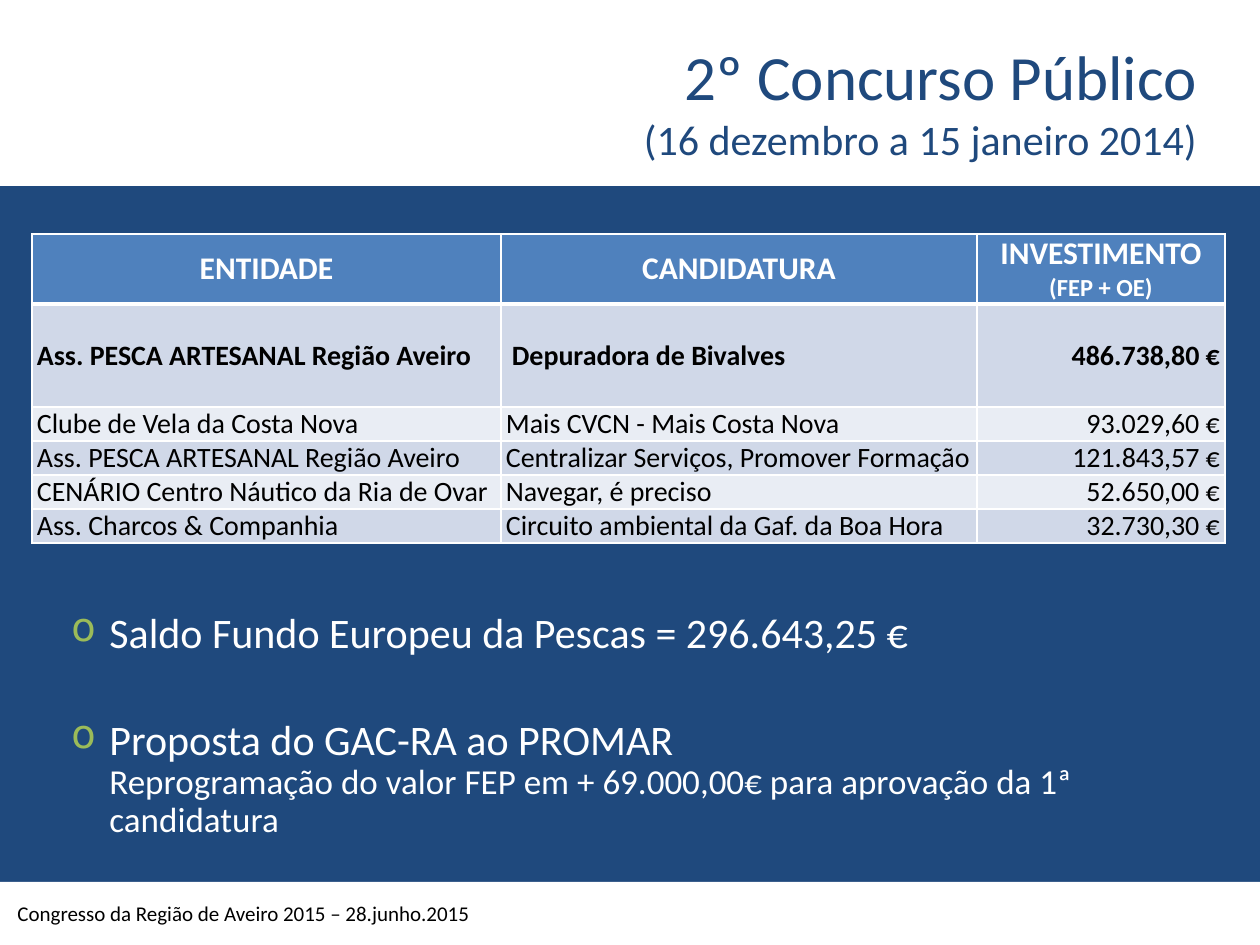
from dataclasses import dataclass

from lxml import etree
from pptx import Presentation
from pptx import util as u
from pptx.dml.color import RGBColor
from pptx.enum import shapes, text
from pptx.oxml import ns

PX_PER_INCH = 126
LEFT, CENTER, RIGHT = text.PP_ALIGN.LEFT, text.PP_ALIGN.CENTER, text.PP_ALIGN.RIGHT


def px(length):
    return u.Emu(round(length * u.Inches(1) / PX_PER_INCH))


@dataclass(frozen=True)
class Theme:
    font: str = "Calibri"
    navy: str = "1F497D"
    white: str = "FFFFFF"
    black: str = "000000"
    bullet: str = "9BBB59"
    header: str = "4F81BD"
    bands: tuple = ("D0D8E8", "E9EDF4")
    title: int = 36
    lead: int = 24
    detail: int = 20
    heading: int = 18
    subheading: int = 14
    cell: int = 16
    footer: int = 12


class SlideBuilder:
    def __init__(self, slide, theme):
        self.slide = slide
        self.theme = theme
        self.fill(slide.background, theme.navy)

    def fill(self, target, color):
        target.fill.solid()
        target.fill.fore_color.rgb = RGBColor.from_string(color)

    def add_xml(self, parent, tag, **attributes):
        return etree.SubElement(parent, ns.qn(tag), attributes)

    def add_solid(self, parent, color):
        self.add_xml(self.add_xml(parent, "a:solidFill"), "a:srgbClr", val=color)

    def style(self, paragraph, color, size=None, bold=False, align=LEFT):
        paragraph.alignment = align
        font = paragraph.font
        font.name = self.theme.font
        font.color.rgb = RGBColor.from_string(color)
        font.bold = bold
        if size:
            font.size = u.Pt(size)

    def write_lines(self, paragraph, lines):
        for index, (wording, size) in enumerate(lines):
            if index:
                paragraph.add_line_break()
            run = paragraph.add_run()
            run.text = wording
            run.font.size = u.Pt(size)

    def band(self, top, height):
        strip = self.slide.shapes.add_shape(
            shapes.MSO_SHAPE.RECTANGLE, 0, px(top), px(1260), px(height))
        strip.shadow.inherit = False
        self.fill(strip, self.theme.white)
        strip.line.fill.background()

    def text_box(self, left, top, width, height, anchor):
        box = self.slide.shapes.add_textbox(px(left), px(top), px(width), px(height))
        frame = box.text_frame
        frame.word_wrap = True
        frame.vertical_anchor = anchor
        return frame

    def title(self, box, lines):
        frame = self.text_box(*box, text.MSO_ANCHOR.BOTTOM)
        frame.margin_left = frame.margin_right = frame.margin_bottom = 0
        heading = frame.paragraphs[0]
        self.write_lines(heading, lines)
        self.style(heading, self.theme.navy, align=RIGHT)

    def footer(self, box, wording):
        note = self.text_box(*box, text.MSO_ANCHOR.MIDDLE).paragraphs[0]
        note.text = wording
        self.style(note, self.theme.black, self.theme.footer)

    def bullets(self, box, items, gap):
        frame = self.text_box(*box, text.MSO_ANCHOR.TOP)
        indent = px(38)
        for index, lines in enumerate(items):
            item = frame.add_paragraph() if index else frame.paragraphs[0]
            props = item._p.get_or_add_pPr()
            props.set("marL", str(indent))
            props.set("indent", str(-indent))
            color = self.add_xml(props, "a:buClr")
            self.add_xml(color, "a:srgbClr", val=self.theme.bullet)
            self.add_xml(props, "a:buSzPct", val="95000")
            self.add_xml(props, "a:buChar", char="o")
            item.line_spacing = 0.9
            if index:
                item.space_before = u.Pt(gap)
            self.write_lines(item, lines)
            self.style(item, self.theme.white)

    def cell(self, cell, lines, sizes, color, background, bold, align, bottom=1):
        cell.vertical_anchor = text.MSO_ANCHOR.MIDDLE
        cell.margin_left = cell.margin_right = px(5)
        cell.margin_top = cell.margin_bottom = 0
        props = cell._tc.get_or_add_tcPr()
        for side, weight in (("L", 1), ("R", 1), ("T", 1), ("B", bottom)):
            edge = self.add_xml(props, f"a:ln{side}", w=str(u.Pt(weight)))
            self.add_solid(edge, self.theme.white)
        self.fill(cell, background)
        cell.text = "\n".join(lines)
        for paragraph, size in zip(cell.text_frame.paragraphs, sizes):
            self.style(paragraph, color, size, bold, align)

    def table(self, left, top, columns, heights, headings, records):
        theme = self.theme
        grid = self.slide.shapes.add_table(
            len(heights), len(columns), px(left), px(top),
            px(sum(columns)), px(sum(heights))).table
        for column, width in zip(grid.columns, columns):
            column.width = px(width)
        for row, height in zip(grid.rows, heights):
            row.height = px(height)
        for index, lines in enumerate(headings):
            self.cell(grid.cell(0, index), lines, (theme.heading, theme.subheading),
                      theme.white, theme.header, True, CENTER, bottom=3)
        for row, record in enumerate(records, 1):
            background = theme.bands[(row - 1) % 2]
            for index, (value, align) in enumerate(zip(record, (LEFT, LEFT, RIGHT))):
                self.cell(grid.cell(row, index), [value], [theme.cell],
                          theme.black, background, row == 1, align)
        return grid


def main():
    deck = Presentation()
    deck.slide_width, deck.slide_height = px(1260), px(945)
    theme = Theme()
    page = SlideBuilder(deck.slides.add_slide(deck.slide_layouts[6]), theme)

    page.band(882, 63)
    page.band(0, 186)
    page.bullets((59, 606, 1138, 265), [
        [("Saldo Fundo Europeu da Pescas = 296.643,25 €", theme.lead)],
        [("Proposta do GAC-RA ao PROMAR", theme.lead),
         ("Reprogramação do valor FEP em + 69.000,00€ para aprovação da 1ª candidatura",
          theme.detail)],
    ], gap=35)
    page.footer((5, 888, 551, 50), "Congresso da Região de Aveiro 2015 – 28.junho.2015")

    headings = [["ENTIDADE"], ["CANDIDATURA"], ["INVESTIMENTO", "(FEP + OE)"]]
    applications = [
        ("Ass. PESCA ARTESANAL Região Aveiro", "Depuradora de Bivalves", "486.738,80 €"),
        ("Clube de Vela da Costa Nova", "Mais CVCN - Mais Costa Nova", "93.029,60 €"),
        ("Ass. PESCA ARTESANAL Região Aveiro", "Centralizar Serviços, Promover Formação",
         "121.843,57 €"),
        ("CENÁRIO Centro Náutico da Ria de Ovar", "Navegar, é preciso", "52.650,00 €"),
        ("Ass. Charcos & Companhia", "Circuito ambiental da Gaf. da Boa Hora", "32.730,30 €"),
    ]
    investments = page.table(32, 234, (469, 476, 248), (70, 103, 34, 34, 34, 34),
                             headings, applications)
    investments.cell(1, 1).margin_left = px(11)

    page.title((64, 6, 1133, 158), [
        ("2º Concurso Público", theme.title),
        ("(16 dezembro a 15 janeiro 2014)", theme.lead),
    ])
    deck.save("out.pptx")


if __name__ == "__main__":
    main()
